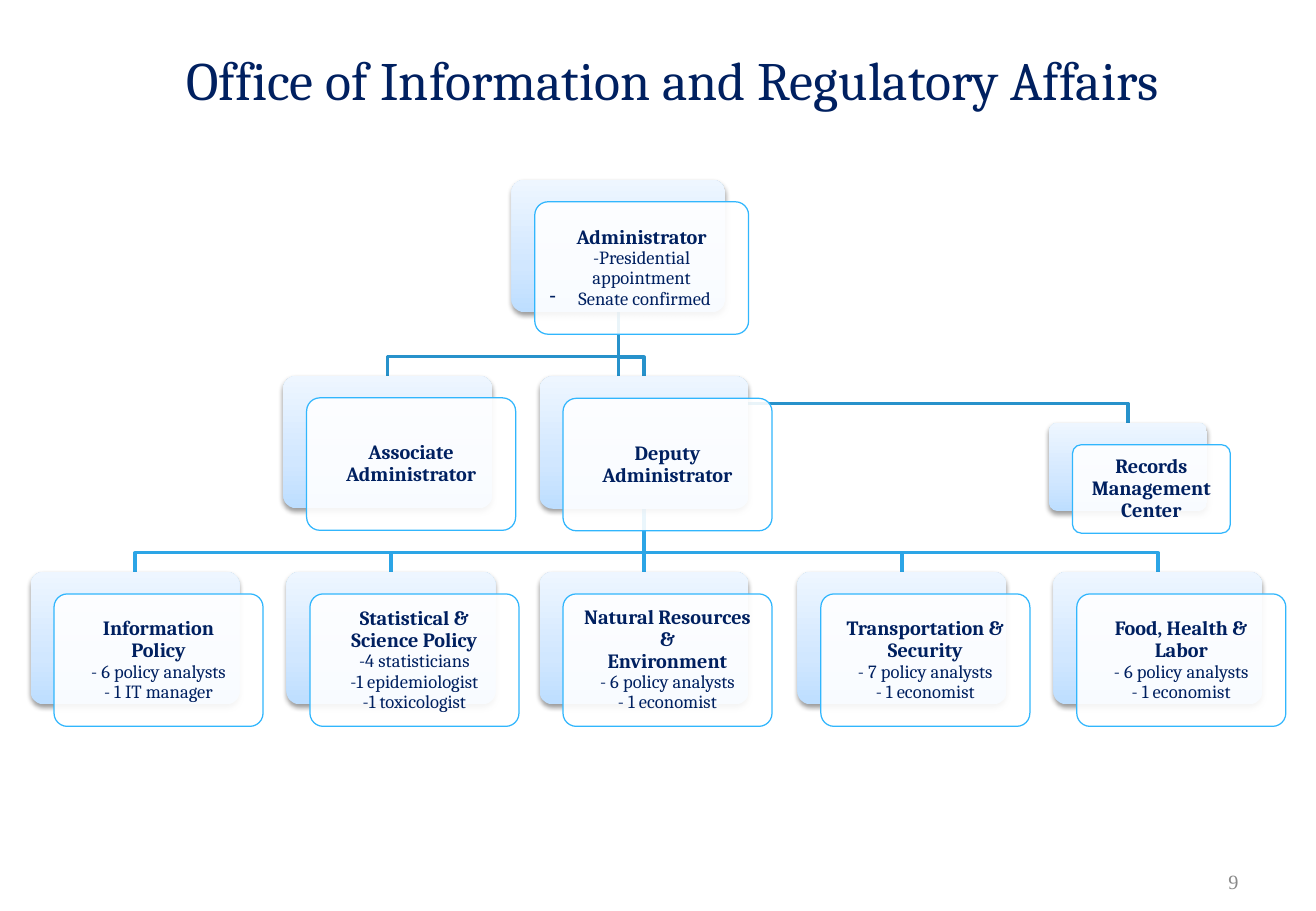
"""Build the organisation chart slide of the Office of Information and Regulatory Affairs."""
from copy import deepcopy
from dataclasses import dataclass

from lxml import etree
from pptx import Presentation
from pptx import util as u
from pptx.dml.color import RGBColor
from pptx.enum import shapes, text
from pptx.oxml.ns import qn


@dataclass(frozen=True)
class Theme:
    """Colours, fonts and type sizes."""
    navy: str = "002060"
    grey: str = "898989"
    white: str = "FFFFFF"
    outline: str = "31B6FD"
    upper_line: str = "2792CB"
    lower_line: str = "2CA5E6"
    shades: tuple = ((0, "BDDEFF"), (0.35, "D1E7FF"), (1, "EEF6FF"))
    font: str = "Cambria"
    number_font: str = "Times New Roman"
    title_size: int = 32
    heading_size: int = 12
    detail_size: int = 11


class ChartSlide:
    """Draws the elements of one slide in one style."""

    def __init__(self, presentation, theme):
        self.theme = theme
        self.slide = presentation.slides.add_slide(presentation.slide_layouts[5])

    def set_text(self, paragraph, words, size, color, font, bold=False):
        paragraph.text = words
        for run in paragraph.runs:
            run.font.size = u.Pt(size)
            run.font.name = font
            run.font.bold = bold
            run.font.color.rgb = RGBColor.from_string(color)

    def title(self, words, left, top, width, height):
        shape = self.slide.shapes.title
        shape.left, shape.top, shape.width, shape.height = map(u.Cm, (left, top, width, height))
        shape.text_frame.vertical_anchor = text.MSO_ANCHOR.MIDDLE
        paragraph = shape.text_frame.paragraphs[0]
        paragraph.alignment = text.PP_ALIGN.CENTER
        self.set_text(paragraph, words, self.theme.title_size, self.theme.navy, self.theme.font)

    def page_number(self, words, left, top, width, height):
        shape = self.slide.shapes.add_textbox(*map(u.Cm, (left, top, width, height)))
        shape.text_frame.word_wrap = True
        shape.text_frame.vertical_anchor = text.MSO_ANCHOR.MIDDLE
        paragraph = shape.text_frame.paragraphs[0]
        paragraph.alignment = text.PP_ALIGN.RIGHT
        self.set_text(
            paragraph, words, self.theme.heading_size, self.theme.grey, self.theme.number_font)

    def rounded(self, left, top, width, height):
        shape = self.slide.shapes.add_shape(
            shapes.MSO_SHAPE.ROUNDED_RECTANGLE, *map(u.Cm, (left, top, width, height)))
        shape.adjustments[0] = 0.1
        shape.shadow.inherit = False
        return shape

    def shade(self, shape):
        shape.line.fill.background()
        shape.fill.gradient()
        shape.fill.gradient_angle = 90
        properties = shape._element.spPr
        stops = properties.find(".//" + qn("a:gsLst"))
        stops.insert(1, deepcopy(stops[0]))
        for stop, (position, color) in zip(shape.fill.gradient_stops, self.theme.shades):
            stop.position = position
            stop.color.rgb = RGBColor.from_string(color)
        shadow = etree.SubElement(
            properties.find(qn("a:effectLst")), qn("a:outerShdw"), blurRad=str(u.Pt(3.1)),
            dist=str(u.Pt(1.6)), dir="5400000", rotWithShape="0")
        color = etree.SubElement(shadow, qn("a:srgbClr"), val="000000")
        etree.SubElement(color, qn("a:alpha"), val="38000")

    def card(self, left, top, headings, details=(), width=4.37, height=2.77):
        back = self.rounded(left, top, width, height)
        self.shade(back)
        front = self.rounded(left + 0.49, top + 0.46, width, height)
        front.fill.solid()
        front.fill.fore_color.rgb = RGBColor.from_string(self.theme.white)
        color = front._element.spPr.find(qn("a:solidFill"))[0]
        etree.SubElement(color, qn("a:alpha"), val="90000")
        front.line.color.rgb = RGBColor.from_string(self.theme.outline)
        front.line.width = u.Pt(0.75)
        frame = front.text_frame
        frame.word_wrap = True
        frame.vertical_anchor = text.MSO_ANCHOR.MIDDLE
        frame.margin_left = frame.margin_right = u.Cm(0.22)
        frame.margin_top = frame.margin_bottom = u.Cm(0.13)
        for index, words in enumerate((*headings, *details)):
            paragraph = frame.paragraphs[0] if index == 0 else frame.add_paragraph()
            paragraph.alignment = text.PP_ALIGN.CENTER
            paragraph.line_spacing = 0.9
            heading = index < len(headings)
            size = self.theme.heading_size if heading else self.theme.detail_size
            self.set_text(paragraph, words, size, self.theme.navy, self.theme.font, heading)
        return back, front

    def dash_bullet(self, paragraph):
        etree.SubElement(paragraph._p.get_or_add_pPr(), qn("a:buChar"), char="-")

    def branch(self, parent, child, color):
        start_x, end_x = (card.left + card.width // 2 for card in (parent, child))
        start_y, end_y = parent.top + parent.height, child.top
        if start_x == end_x:
            line = self.slide.shapes.add_connector(
                shapes.MSO_CONNECTOR.STRAIGHT, start_x, start_y, end_x, end_y)
            line.begin_connect(parent, 2)
            line.end_connect(child, 0)
            etree.SubElement(line._element.spPr, qn("a:effectLst"))
        else:
            bend_y = end_y - u.Cm(0.4)
            builder = self.slide.shapes.build_freeform(start_x, start_y)
            builder.add_line_segments(
                [(start_x, bend_y), (end_x, bend_y), (end_x, end_y)], close=False)
            line = builder.convert_to_shape()
            line.fill.background()
            line.shadow.inherit = False
        line.line.color.rgb = RGBColor.from_string(color)
        line.line.width = u.Pt(2)
        self.slide.shapes._spTree.insert(2, line._element)


def main():
    presentation = Presentation()
    presentation.slide_width, presentation.slide_height = u.Cm(27.51), u.Cm(19.05)
    theme = Theme()
    chart = ChartSlide(presentation, theme)
    chart.title("Office of Information and Regulatory Affairs", 1.37, 0.76, 25.4, 1.78)
    chart.page_number("9", 19.71, 17.93, 6.43, 1.02)

    administrator, front = chart.card(
        10.69, 3.76, ["Administrator"],
        ["-Presidential appointment", "Senate confirmed"], width=4.47)
    chart.dash_bullet(front.text_frame.paragraphs[-1])
    deputy, _ = chart.card(11.28, 7.87, ["Deputy Administrator"])
    associate, _ = chart.card(5.92, 7.86, ["Associate Administrator"])
    records, _ = chart.card(
        21.93, 8.84, ["Records Management", "Center"], width=3.3, height=1.85)

    branches = [
        (0.64, ["Information", "Policy"], ["- 6 policy analysts", "- 1 IT manager"]),
        (5.99, ["Statistical &", "Science Policy"],
         ["-4 statisticians", "-1 epidemiologist", "-1 toxicologist"]),
        (11.28, ["Natural Resources &", "Environment"], ["- 6 policy analysts", "- 1 economist"]),
        (16.67, ["Transportation &", "Security"], ["- 7 policy analysts", "- 1 economist"]),
        (22.02, ["Food, Health &", "Labor"], ["- 6 policy analysts", "- 1 economist"]),
    ]
    for left, headings, details in branches:
        office, _ = chart.card(left, 11.96, headings, details)
        chart.branch(deputy, office, theme.lower_line)
    for report in (deputy, associate, records):
        chart.branch(administrator, report, theme.upper_line)

    presentation.save("out.pptx")


if __name__ == "__main__":
    main()
